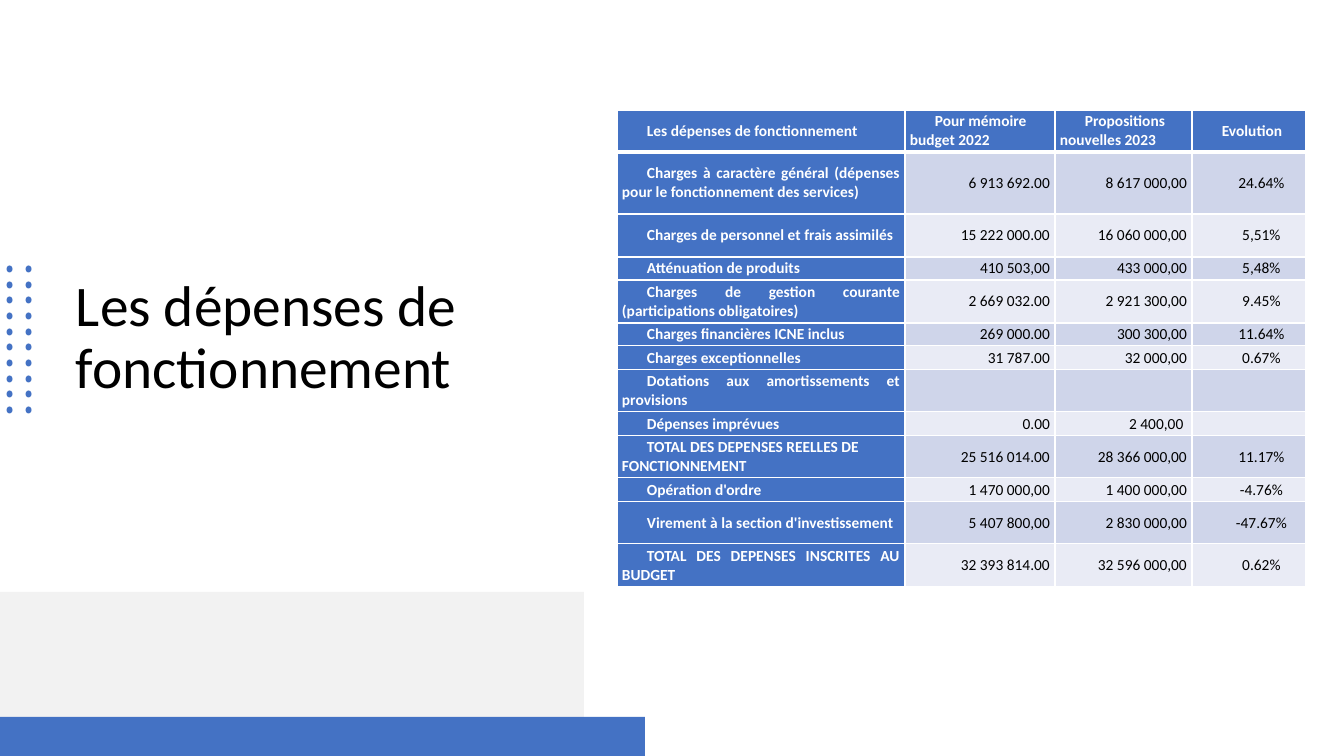
import pptx
import pptx.util
import pptx.dml.color
import pptx.enum.shapes
import pptx.enum.text
import pptx.oxml.ns
import lxml.etree
from dataclasses import dataclass


@dataclass
class Theme:
    font: str = "Calibri"
    title_size: int = 41
    table_size: int = 11
    blue: str = "4472C4"
    grey: str = "F2F2F2"
    band_dark: str = "CFD5EA"
    band_light: str = "E9EBF5"
    white: str = "FFFFFF"
    black: str = "000000"


theme = Theme()
rgb = pptx.dml.color.RGBColor.from_string
qn = pptx.oxml.ns.qn
ALIGN = pptx.enum.text.PP_ALIGN
MIDDLE = pptx.enum.text.MSO_ANCHOR.MIDDLE
SHAPE = pptx.enum.shapes.MSO_SHAPE


def px(n):
    return pptx.util.Emu(round(n * 914400 / 100.8))


def add_filled(shapes, kind, box, color):
    sp = shapes.add_shape(kind, *map(px, box))
    sp.shadow.inherit = False
    sp.fill.solid()
    sp.fill.fore_color.rgb = rgb(color)
    sp.line.fill.background()
    return sp


prs = pptx.Presentation()
prs.slide_width, prs.slide_height = px(1344), px(756)
s = prs.slides.add_slide(prs.slide_layouts[6])

# Title
sp = s.shapes.add_textbox(px(66), px(162), px(411), px(354))
tf = sp.text_frame
tf.word_wrap = True
tf.vertical_anchor = MIDDLE
tf.text = "Les dépenses de fonctionnement"
p = tf.paragraphs[0]
p.line_spacing = 0.9
r = p.runs[0]
r.font.name = theme.font
r.font.size = pptx.util.Pt(theme.title_size)
r.font.color.rgb = rgb(theme.black)

# Grid of dots
dots = s.shapes.add_group_shape()
for row in range(10):
    for x in (6, 25):
        y = 266 + round(row * 141 / 9)
        dot = add_filled(dots.shapes, SHAPE.OVAL, (x, y, 7, 6), theme.blue)
        dot.rotation = 90

# Bottom bands
add_filled(s.shapes, SHAPE.RECTANGLE, (0, 592, 584, 164), theme.grey)
add_filled(s.shapes, SHAPE.RECTANGLE, (0, 717, 645, 39), theme.blue)

# Budget table: row height, then the cells
rows = [
    (42, "Les dépenses de fonctionnement", "Pour mémoire budget 2022",
     "Propositions nouvelles 2023", "Evolution"),
    (62, "Charges à caractère général (dépenses pour le fonctionnement des services)",
     "6 913 692.00", "8 617 000,00", "24.64%"),
    (43, "Charges de personnel et frais assimilés",
     "15 222 000.00", "16 060 000,00", "5,51%"),
    (23, "Atténuation de produits", "410 503,00", "433 000,00", "5,48%"),
    (43, "Charges de gestion courante (participations obligatoires)",
     "2 669 032.00", "2 921 300,00", "9.45%"),
    (23, "Charges financières ICNE inclus", "269 000.00", "300 300,00", "11.64%"),
    (24, "Charges exceptionnelles", "31 787.00", "32 000,00", "0.67%"),
    (42, "Dotations aux amortissements et provisions", "", "", ""),
    (24, "Dépenses imprévues", "0.00", "2 400,00 ", ""),
    (42, "TOTAL DES DEPENSES REELLES DE FONCTIONNEMENT",
     "25 516 014.00", "28 366 000,00", "11.17%"),
    (24, "Opération d'ordre", "1 470 000,00", "1 400 000,00", "-4.76%"),
    (42, "Virement à la section d'investissement",
     "5 407 800,00", "2 830 000,00", "-47.67%"),
    (43, "TOTAL DES DEPENSES INSCRITES AU BUDGET",
     "32 393 814.00", "32 596 000,00", "0.62%"),
]
col_widths = [288, 150, 137, 114]
col_aligns = [ALIGN.JUSTIFY, ALIGN.RIGHT, ALIGN.RIGHT, ALIGN.CENTER]
left_aligned = {(0, 1), (9, 0)}

table = s.shapes.add_table(len(rows), len(col_widths), px(617), px(110),
                           px(sum(col_widths)), px(sum(row[0] for row in rows))).table
for col, width in zip(table.columns, col_widths):
    col.width = px(width)

for i, (height, *texts) in enumerate(rows):
    table.rows[i].height = px(height)
    for j, text in enumerate(texts):
        cell = table.cell(i, j)
        heading = i == 0 or j == 0
        cell.vertical_anchor = MIDDLE
        cell.margin_left = cell.margin_right = px(5)
        cell.margin_top = cell.margin_bottom = 0

        # White borders, thicker under the header row
        tcPr = cell._tc.get_or_add_tcPr()
        for side in ("lnL", "lnR", "lnT", "lnB"):
            thick = (i, side) in ((0, "lnB"), (1, "lnT"))
            ln = lxml.etree.SubElement(tcPr, qn(f"a:{side}"),
                                       w=str(pptx.util.Pt(3 if thick else 1)))
            fill = lxml.etree.SubElement(ln, qn("a:solidFill"))
            lxml.etree.SubElement(fill, qn("a:srgbClr"), val=theme.white)
        band = theme.band_dark if i % 2 else theme.band_light
        cell.fill.solid()
        cell.fill.fore_color.rgb = rgb(theme.blue if heading else band)

        # Text with a first-line indent
        cell.text_frame.text = text
        p = cell.text_frame.paragraphs[0]
        p.alignment = ALIGN.JUSTIFY if i == 0 else col_aligns[j]
        if (i, j) in left_aligned:
            p.alignment = ALIGN.LEFT
        pPr = p._p.get_or_add_pPr()
        pPr.set("marL", "0")
        pPr.set("indent", str(px(25)))
        for r in p.runs:
            r.font.name = theme.font
            r.font.size = pptx.util.Pt(theme.table_size)
            r.font.bold = heading
            r.font.color.rgb = rgb(theme.white if heading else theme.black)
        if not text:
            lxml.etree.SubElement(p._p, qn("a:endParaRPr"), sz=str(theme.table_size * 100))

prs.save("out.pptx")
